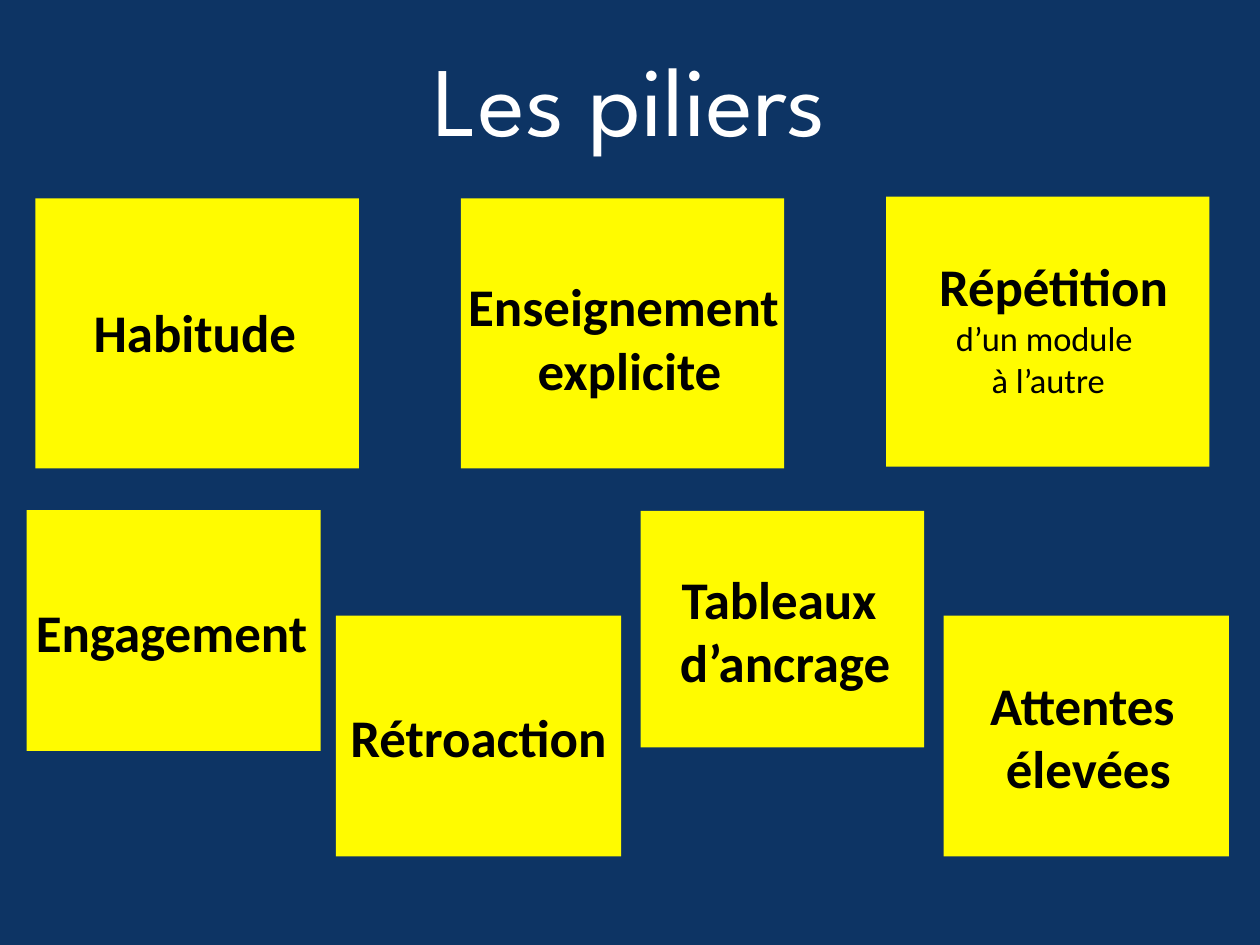
from pptx import Presentation
from pptx.dml.color import RGBColor
from pptx.enum.shapes import MSO_SHAPE as Shape
from pptx.enum.text import MSO_ANCHOR as Anchor, MSO_AUTO_SIZE as AutoSize, PP_ALIGN as Align
from pptx.util import Inches, Pt

COLORS = {"background": "0D3464", "card": "FFFB00", "title": "FFFFFF", "text": "000000"}
TITLE_ONLY = 5
MARGIN = 0.06

CARDS = [
    (0.4, 2.24, 3.65, 3.05),
    (5.2, 2.24, 3.65, 3.05),
    (10, 2.22, 3.65, 3.05),
    (0.3, 5.76, 3.32, 2.72),
    (7.23, 5.77, 3.2, 2.67),
    (3.79, 6.95, 3.22, 2.72),
    (10.65, 6.95, 3.22, 2.72),
]
PILLARS = [
    (["Habitude"], (1, 3.33, 2.4, 0.83)),
    (["Enseignement ", "explicite"], (5.23, 3.04, 3.75, 1.54)),
    (["Répétition"], (10.54, 2.81, 2.7, 0.83)),
    (["Engagement"], (0.23, 6.71, 3.41, 0.83)),
    (["Rétroaction"], (3.9, 7.9, 3, 0.83)),
    (["Tableaux ", "d’ancrage"], (7.62, 6.34, 2.48, 1.54)),
    (["Attentes", " élevées"], (11.12, 7.54, 2.19, 1.54)),
]
REPETITION_DETAIL = (["d’un module ", "à l’autre"], (10.71, 3.53, 2.24, 1.04))


def rgb(name):
    """Return the named colour."""
    return RGBColor.from_string(COLORS[name])


def place(shape, box):
    """Move and size a shape in inches."""
    shape.left, shape.top, shape.width, shape.height = map(Inches, box)


def write(shape, lines, size, font_name, color, bold=False, wrap=True):
    """Write centred lines in a shape, one paragraph each."""
    frame = shape.text_frame
    frame.text = "\n".join(lines)
    frame.auto_size = AutoSize.NONE
    frame.word_wrap = wrap
    frame.vertical_anchor = Anchor.MIDDLE
    frame.margin_left = frame.margin_right = Inches(MARGIN)
    frame.margin_top = frame.margin_bottom = Inches(MARGIN)
    for paragraph in frame.paragraphs:
        paragraph.alignment = Align.CENTER
        paragraph.font.size = Pt(size)
        paragraph.font.name = font_name
        paragraph.font.bold = bold
        paragraph.font.color.rgb = rgb(color)


def add_title(slide, text):
    """Place and format the slide title."""
    place(slide.shapes.title, (1.04, 0.28, 12.14, 1.63))
    write(slide.shapes.title, [text], 80, "League Spartan", "title")


def add_card(slide, box):
    """Add a plain yellow card."""
    card = slide.shapes.add_shape(Shape.RECTANGLE, *map(Inches, box))
    card.shadow.inherit = False
    card.fill.solid()
    card.fill.fore_color.rgb = rgb("card")
    card.line.fill.background()


def add_label(slide, lines, box, size=43, bold=True, wrap=False):
    """Add a text label over a card."""
    label = slide.shapes.add_textbox(*map(Inches, box))
    write(label, lines, size, "Calibri", "text", bold, wrap)


def main():
    """Build and save the slide."""
    presentation = Presentation()
    presentation.slide_width = Inches(14.22)
    presentation.slide_height = Inches(10.67)
    slide = presentation.slides.add_slide(presentation.slide_layouts[TITLE_ONLY])
    slide.background.fill.solid()
    slide.background.fill.fore_color.rgb = rgb("background")

    add_title(slide, "Les piliers")
    for box in CARDS:
        add_card(slide, box)
    for lines, box in PILLARS:
        add_label(slide, lines, box)
    add_label(slide, *REPETITION_DETAIL, size=28, bold=False, wrap=True)
    presentation.save("out.pptx")


if __name__ == "__main__":
    main()
